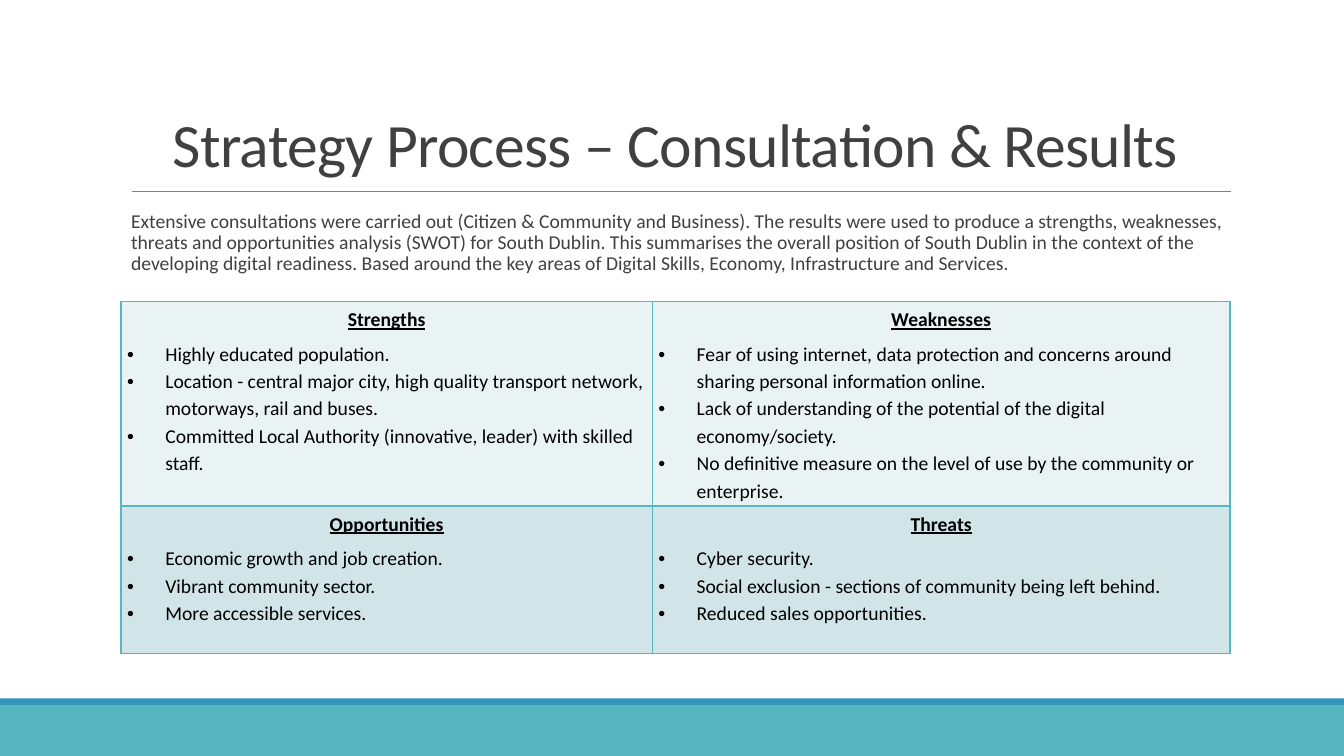
import pptx
import pptx.dml.color
import pptx.enum.shapes
import pptx.enum.text
import pptx.oxml
import pptx.oxml.ns
import pptx.util
from lxml import etree

Inches = pptx.util.Inches
Pt = pptx.util.Pt
Align = pptx.enum.text.PP_ALIGN
qn = pptx.oxml.ns.qn

COLORS = {
    "teal": "58B6C0",
    "blue": "3494BA",
    "rule": "808080",
    "text": "404040",
    "black": "000000",
    "light": "EAF3F4",
    "medium": "D1E5E8",
}

SWOT = [
    [
        ("Strengths", [
            "Highly educated population.",
            "Location - central major city, high quality transport network, motorways, rail and buses.",
            "Committed Local Authority (innovative, leader) with skilled staff.",
        ]),
        ("Weaknesses", [
            "Fear of using internet, data protection and concerns around sharing personal information online.",
            "Lack of understanding of the potential of the digital economy/society.",
            "No definitive measure on the level of use by the community or enterprise.",
        ]),
    ],
    [
        ("Opportunities", [
            "Economic growth and job creation.",
            "Vibrant community sector.",
            "More accessible services.",
        ]),
        ("Threats", [
            "Cyber security.",
            "Social exclusion - sections of community being left behind.",
            "Reduced sales opportunities.",
        ]),
    ],
]


def rgb(name):
    return pptx.dml.color.RGBColor.from_string(COLORS[name])


def write(para, text, size, color, spacing):
    para.text = text
    para.line_spacing = spacing
    font = para.runs[0].font
    font.name = "Calibri"
    font.size = Pt(size)
    font.color.rgb = rgb(color)
    return font


deck = pptx.Presentation()
deck.slide_width = Inches(13.33)
deck.slide_height = Inches(7.5)
page = deck.slides.add_slide(deck.slide_layouts[6])

for top, height, color in [(7, 0.5, "teal"), (6.93, 0.07, "blue")]:
    band = page.shapes.add_shape(
        pptx.enum.shapes.MSO_SHAPE.RECTANGLE,
        Inches(0), Inches(top), deck.slide_width, Inches(height))
    band.shadow.inherit = False
    band.fill.solid()
    band.fill.fore_color.rgb = rgb(color)
    band.line.fill.background()

rule = page.shapes.add_connector(
    pptx.enum.shapes.MSO_CONNECTOR.STRAIGHT,
    Inches(1.31), Inches(1.9), Inches(12.21), Inches(1.9))
rule.line.color.rgb = rgb("rule")
rule.line.width = Pt(0.5)
etree.SubElement(rule.element.spPr, qn("a:effectLst"))

title = page.shapes.add_textbox(Inches(1.2), Inches(0.91), Inches(11), Inches(0.93)).text_frame
title.word_wrap = True
title.vertical_anchor = pptx.enum.text.MSO_ANCHOR.BOTTOM
heading = title.paragraphs[0]
write(heading, "Strategy Process – Consultation & Results", 44, "text", 0.85)
heading.alignment = Align.CENTER
heading.runs[0].font._element.set("spc", "-50")

intro = page.shapes.add_textbox(Inches(1.3), Inches(2.05), Inches(10.9), Inches(0.8)).text_frame
intro.word_wrap = True
intro.margin_left = intro.margin_right = 0
write(
    intro.paragraphs[0],
    "Extensive consultations were carried out (Citizen & Community and Business). "
    "The results were used to produce a strengths, weaknesses, threats and opportunities "
    "analysis (SWOT) for South Dublin. This summarises the overall position of South Dublin "
    "in the context of the developing digital readiness. Based around the key areas of "
    "Digital Skills, Economy, Infrastructure and Services.",
    14, "text", 0.9)

table = page.shapes.add_table(
    2, 2, Inches(1.2), Inches(2.99), Inches(11), Inches(3.49)).table
for column, width in zip(table.columns, [5.27, 5.73]):
    column.width = Inches(width)
for row, height in zip(table.rows, [2.03, 1.46]):
    row.height = Inches(height)

for row, (quadrants, fill) in enumerate(zip(SWOT, ["light", "medium"])):
    for column, (name, points) in enumerate(quadrants):
        cell = table.cell(row, column)
        cell.margin_left = cell.margin_right = Inches(0.06)
        cell.margin_top = cell.margin_bottom = Inches(0.03)

        properties = cell._tc.get_or_add_tcPr()
        for side in ["lnL", "lnR", "lnT", "lnB"]:
            border = etree.SubElement(properties, qn(f"a:{side}"), w=str(Pt(1)))
            paint = etree.SubElement(border, qn("a:solidFill"))
            etree.SubElement(paint, qn("a:srgbClr"), val=COLORS["teal"])
        cell.fill.solid()
        cell.fill.fore_color.rgb = rgb(fill)

        para = cell.text_frame.paragraphs[0]
        font = write(para, name, 14, "black", 1.15)
        font.bold = font.underline = True
        para.alignment = Align.CENTER

        for index, point in enumerate(points):
            para = cell.text_frame.add_paragraph()
            write(para, point, 14, "black", 1.15).bold = False
            para.space_before = Pt(0 if index else 5)
            layout = para._p.get_or_add_pPr()
            layout.set("marL", str(Inches(0.38)))
            layout.set("indent", str(-Inches(0.38)))
            etree.SubElement(layout, qn("a:buFont"), typeface="Arial")
            etree.SubElement(layout, qn("a:buChar"), char="•")

deck.save("out.pptx")
